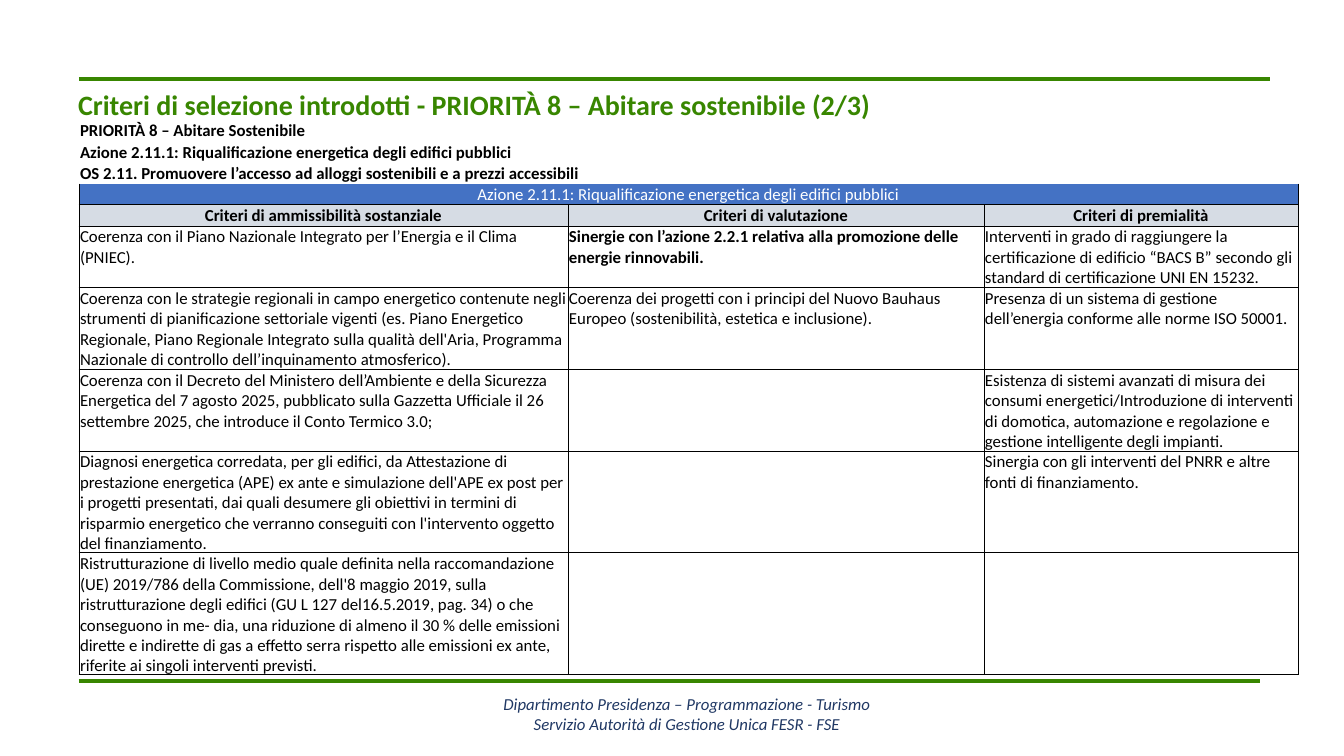
"""Build the slide on the selection criteria of Priorità 8."""
from lxml import etree
from pptx import Presentation
from pptx import util as u
from pptx.dml.color import RGBColor
from pptx.enum import shapes, text
from pptx.oxml import ns

EMU_PER_PX = 914400 / 100.8
FONT = "Calibri"
GREEN = RGBColor(0x38, 0x86, 0x00)
NAVY = RGBColor(0x20, 0x38, 0x64)
BLUE = RGBColor(0x44, 0x72, 0xC4)
GREY = RGBColor(0xD6, 0xDC, 0xE4)
BLACK = RGBColor(0x00, 0x00, 0x00)
WHITE = RGBColor(0xFF, 0xFF, 0xFF)

TITLE = "Criteri di selezione introdotti - PRIORITÀ 8 – Abitare sostenibile (2/3)"
FOOTER = [
    "Dipartimento Presidenza – Programmazione - Turismo",
    "Servizio Autorità di Gestione Unica FESR - FSE",
]
ACTION = "Azione 2.11.1: Riqualificazione energetica degli edifici pubblici"
HEADINGS = [
    "PRIORITÀ 8 – Abitare Sostenibile",
    ACTION,
    "OS 2.11. Promuovere l’accesso ad alloggi sostenibili e a prezzi accessibili",
]
COLUMN_NAMES = [
    "Criteri di ammissibilità sostanziale",
    "Criteri di valutazione",
    "Criteri di premialità",
]
CRITERIA = [
    ["Coerenza con il Piano Nazionale Integrato per l’Energia e il Clima (PNIEC).",
     "Sinergie con l’azione 2.2.1 relativa alla promozione delle energie rinnovabili.",
     "Interventi in grado di raggiungere la certificazione di edificio “BACS B” secondo gli "
     "standard di certificazione UNI EN 15232."],
    ["Coerenza con le strategie regionali in campo energetico contenute negli strumenti di "
     "pianificazione settoriale vigenti (es. Piano Energetico Regionale, Piano Regionale "
     "Integrato sulla qualità dell'Aria, Programma Nazionale di controllo dell’inquinamento "
     "atmosferico).",
     "Coerenza dei progetti con i principi del Nuovo Bauhaus Europeo (sostenibilità, estetica "
     "e inclusione).",
     "Presenza di un sistema di gestione dell’energia conforme alle norme ISO 50001."],
    ["Coerenza con il Decreto del Ministero dell’Ambiente e della Sicurezza Energetica del 7 "
     "agosto 2025, pubblicato sulla Gazzetta Ufficiale il 26 settembre 2025, che introduce il "
     "Conto Termico 3.0;",
     "",
     "Esistenza di sistemi avanzati di misura dei consumi energetici/Introduzione di interventi "
     "di domotica, automazione e regolazione e gestione intelligente degli impianti."],
    ["Diagnosi energetica corredata, per gli edifici, da Attestazione di prestazione energetica "
     "(APE) ex ante e simulazione dell'APE ex post per i progetti presentati, dai quali desumere "
     "gli obiettivi in termini di risparmio energetico che verranno conseguiti con l'intervento "
     "oggetto del finanziamento.",
     "",
     "Sinergia con gli interventi del PNRR e altre fonti di finanziamento."],
    ["Ristrutturazione di livello medio quale definita nella raccomandazione (UE) 2019/786 della "
     "Commissione, dell'8 maggio 2019, sulla ristrutturazione degli edifici (GU L 127 "
     "del16.5.2019, pag. 34) o che conseguono in me- dia, una riduzione di almeno il 30 % delle "
     "emissioni dirette e indirette di gas a effetto serra rispetto alle emissioni ex ante, "
     "riferite ai singoli interventi previsti.",
     "",
     ""],
]
BOLD_CRITERION = CRITERIA[0][1]
COLUMN_WIDTHS = [489, 416, 314]
ROW_HEIGHTS = [20] * 5 + [51, 70, 70, 70, 87]


def px(length):
    """Turn pixels into EMU."""
    return u.Emu(round(length * EMU_PER_PX))


def add_run(paragraph, words, size, color, bold=False, italic=False):
    """Add one formatted run to a paragraph."""
    run = paragraph.add_run()
    run.text = words
    font = run.font
    font.name, font.size, font.bold, font.italic = FONT, u.Pt(size), bold, italic
    font.color.rgb = color


def add_rule(slide, left, right, top):
    """Draw a horizontal green rule."""
    rule = slide.shapes.add_connector(
        shapes.MSO_CONNECTOR.STRAIGHT, px(left), px(top), px(right), px(top))
    rule.line.color.rgb = GREEN
    rule.line.width = u.Pt(3.25)
    etree.SubElement(rule.element.spPr, ns.qn("a:effectLst"))


def add_title(slide):
    """Place and fill the title placeholder."""
    title = slide.shapes.title
    title.left, title.top, title.width, title.height = px(68), px(82), px(1198), px(44)
    frame = title.text_frame
    frame.word_wrap = True
    frame.auto_size = text.MSO_AUTO_SIZE.SHAPE_TO_FIT_TEXT
    frame.vertical_anchor = text.MSO_ANCHOR.TOP
    paragraph = frame.paragraphs[0]
    paragraph.alignment = text.PP_ALIGN.LEFT
    add_run(paragraph, TITLE, 20, GREEN, bold=True)


def add_footer(slide):
    """Add the two centred footer lines."""
    frame = slide.shapes.add_textbox(px(52), px(694), px(1270), px(57)).text_frame
    frame.word_wrap = True
    frame.margin_top = 0
    for index, line in enumerate(FOOTER):
        paragraph = frame.add_paragraph() if index else frame.paragraphs[0]
        paragraph.alignment = text.PP_ALIGN.CENTER
        add_run(paragraph, line, 12, NAVY, italic=True)


def set_borders(cell, sides):
    """Give a cell thin black borders on the named sides only."""
    properties = cell._tc.get_or_add_tcPr()
    for side in "LRTB":
        line = etree.SubElement(properties, ns.qn(f"a:ln{side}"), w=str(u.Pt(0.5)))
        if side in sides:
            fill = etree.SubElement(line, ns.qn("a:solidFill"))
            etree.SubElement(fill, ns.qn("a:srgbClr"), val=str(BLACK))
        else:
            etree.SubElement(line, ns.qn("a:noFill"))


def fill_cell(cell, words, color=BLACK, bold=False, fill=None, centred=False,
              anchor=text.MSO_ANCHOR.BOTTOM, sides="LRTB"):
    """Format one table cell and write its text."""
    set_borders(cell, sides)
    if fill is None:
        cell.fill.background()
    else:
        cell.fill.solid()
        cell.fill.fore_color.rgb = fill
    cell.margin_left = cell.margin_right = cell.margin_top = px(1)
    cell.margin_bottom = 0
    cell.vertical_anchor = anchor
    paragraph = cell.text_frame.paragraphs[0]
    paragraph.alignment = text.PP_ALIGN.CENTER if centred else text.PP_ALIGN.LEFT
    paragraph.font.size = u.Pt(12)
    if words:
        add_run(paragraph, words, 12, color, bold)


def fill_band(table, row, words, **style):
    """Merge a whole row and write one text in it."""
    last = len(COLUMN_WIDTHS) - 1
    table.cell(row, 0).merge(table.cell(row, last))
    for column in range(last + 1):
        fill_cell(table.cell(row, column), "" if column else words, **style)


def add_criteria_table(slide):
    """Add the table of headings and criteria."""
    table = slide.shapes.add_table(
        len(ROW_HEIGHTS), len(COLUMN_WIDTHS), px(79), px(120),
        px(sum(COLUMN_WIDTHS)), px(sum(ROW_HEIGHTS))).table
    table.first_row = table.horz_banding = False
    for column, width in zip(table.columns, COLUMN_WIDTHS):
        column.width = px(width)
    for row, height in zip(table.rows, ROW_HEIGHTS):
        row.height = px(height)

    for row, heading in enumerate(HEADINGS):
        fill_band(table, row, heading, bold=True, sides="")
    action_row = len(HEADINGS)
    fill_band(table, action_row, ACTION, color=WHITE, fill=BLUE, centred=True, sides="LRB")
    for column, name in enumerate(COLUMN_NAMES):
        fill_cell(table.cell(action_row + 1, column), name, bold=True, fill=GREY, centred=True)
    for row, criteria in enumerate(CRITERIA, action_row + 2):
        for column, criterion in enumerate(criteria):
            fill_cell(table.cell(row, column), criterion, bold=criterion == BOLD_CRITERION,
                      anchor=text.MSO_ANCHOR.TOP)


def main():
    """Build and save the presentation."""
    presentation = Presentation()
    presentation.slide_width, presentation.slide_height = px(1344), px(756)
    slide = presentation.slides.add_slide(presentation.slide_layouts[5])
    add_rule(slide, 79, 1270, 79)
    add_rule(slide, 79, 1260, 681)
    add_footer(slide)
    add_title(slide)
    add_criteria_table(slide)
    presentation.save("out.pptx")


if __name__ == "__main__":
    main()
